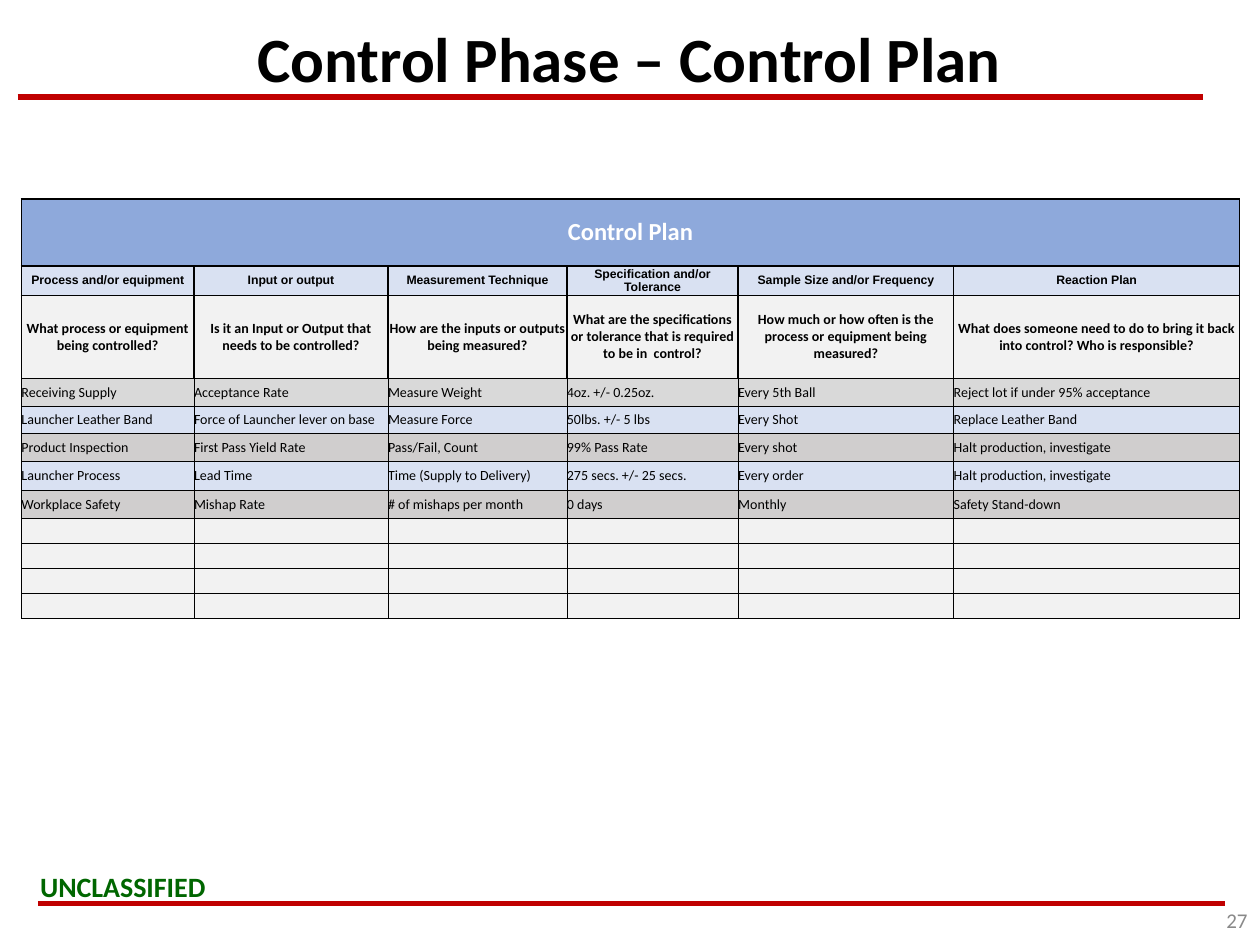
from lxml.etree import SubElement
from pptx import Presentation
from pptx.dml.color import RGBColor
from pptx.enum.shapes import MSO_CONNECTOR
from pptx.enum.text import MSO_ANCHOR, PP_ALIGN
from pptx.oxml.ns import qn
from pptx.util import Inches, Pt

RULE = "C00000"
WIDTHS = [1.37, 1.54, 1.42, 1.36, 1.71, 2.27]
HEADS = ["Process and/or equipment", "Input or output", "Measurement Technique",
         "Specification and/or Tolerance", "Sample Size and/or Frequency",
         "Reaction Plan"]
ASKS = ["What process or equipment being controlled?",
        "Is it an Input or Output that needs to be controlled?",
        "How are the inputs or outputs being measured?",
        "What are the specifications or tolerance that is required to be in  control?",
        "How much or how often is the process or equipment being measured?",
        "What does someone need to do to bring it back into control? Who is responsible?"]
ITEMS = [
    ["Receiving Supply", "Acceptance Rate", "Measure Weight", "4oz. +/- 0.25oz.",
     "Every 5th Ball", "Reject lot if under 95% acceptance"],
    ["Launcher Leather Band", "Force of Launcher lever on base", "Measure Force",
     "50lbs. +/- 5 lbs", "Every Shot", "Replace Leather Band"],
    ["Product Inspection", "First Pass Yield Rate", "Pass/Fail, Count",
     "99% Pass Rate", "Every shot", "Halt production, investigate"],
    ["Launcher Process", "Lead Time", "Time (Supply to Delivery)",
     "275 secs. +/- 25 secs.", "Every order", "Halt production, investigate"],
    ["Workplace Safety", "Mishap Rate", "# of mishaps per month", "0 days",
     "Monthly", "Safety Stand-down"],
]
BANDS = ["D9D9D9", "D9E1F2", "D0CECE", "D9E1F2", "D0CECE"]
TALLS = [0.22, 0.22, 0.22, 0.23, 0.22]
BLANKS = 4


def color(code):
    return RGBColor.from_string(code)


def style(para, size, code="000000", bold=False, face="Calibri", align=PP_ALIGN.LEFT):
    para.alignment = align
    font = para.font
    font.name, font.size, font.bold = face, Pt(size), bold
    font.color.rgb = color(code)


def add_rule(slide, left, top, width):
    line = slide.shapes.add_connector(
        MSO_CONNECTOR.STRAIGHT, Inches(left), Inches(top),
        Inches(left + width), Inches(top))
    line.line.color.rgb = color(RULE)
    line.line.width = Pt(3)
    SubElement(line.element.spPr, qn("a:effectLst"))


def add_label(slide, box, text, size, code, wrap=True, **look):
    frame = slide.shapes.add_textbox(*map(Inches, box)).text_frame
    frame.word_wrap = wrap
    frame.vertical_anchor = MSO_ANCHOR.MIDDLE if wrap else MSO_ANCHOR.TOP
    frame.text = text
    style(frame.paragraphs[0], size, code, **look)


def add_title(slide, box, text):
    title = slide.shapes.title
    title.left, title.top, title.width, title.height = map(Inches, box)
    title.text_frame.text = text
    title.text_frame.vertical_anchor = MSO_ANCHOR.MIDDLE
    style(title.text_frame.paragraphs[0], 36, bold=True, align=PP_ALIGN.CENTER)


def add_edges(cell, width, top):
    props = cell._tc.get_or_add_tcPr()
    for side in "LRTB":
        size = top if side == "T" else width
        edge = SubElement(props, qn(f"a:ln{side}"), w=str(Pt(size)))
        fill = SubElement(edge, qn("a:solidFill"))
        SubElement(fill, qn("a:srgbClr"), val="000000")


def fill_cell(cell, text, fill, edge, top, size, **look):
    add_edges(cell, edge, top)
    cell.fill.solid()
    cell.fill.fore_color.rgb = color(fill)
    cell.margin_left = cell.margin_right = cell.margin_top = cell.margin_bottom = 0
    cell.vertical_anchor = MSO_ANCHOR.MIDDLE
    para = cell.text_frame.paragraphs[0]
    if text:
        para.text = text
    else:
        SubElement(para._p, qn("a:endParaRPr"), sz=str(size * 100))
    style(para, size, **look)


def add_plan(slide, box):
    head = dict(bold=True, align=PP_ALIGN.CENTER)
    count = len(WIDTHS)
    # Each row: height, texts, fill, edge width, top edge width, text size, look
    rows = [
        (0.53, ["Control Plan"] + [""] * (count - 1), "8EA9DB", 1, 1, 14,
         dict(head, code="FFFFFF")),
        (0.22, HEADS, "D9E1F2", 1, 1, 7, dict(head, face="Arial")),
        (0.66, ASKS, "F2F2F2", 1, 1, 8, head),
    ]
    for i, (tall, texts, fill) in enumerate(zip(TALLS, ITEMS, BANDS)):
        rows.append((tall, texts, fill, 0.5, 0.5 if i else 1, 8, {}))
    rows += [(0.2, [""] * count, "F2F2F2", 0.5, 0.5, 8, {})] * BLANKS

    table = slide.shapes.add_table(len(rows), count, *map(Inches, box)).table
    for col, width in zip(table.columns, WIDTHS):
        col.width = Inches(width)
    for row, (tall, texts, fill, edge, top, size, look) in zip(table.rows, rows):
        row.height = Inches(tall)
        for cell, text in zip(row.cells, texts):
            fill_cell(cell, text, fill, edge, top, size, **look)
    table.cell(0, 0).merge(table.cell(0, count - 1))


def main():
    deck = Presentation()
    deck.slide_width, deck.slide_height = Inches(10), Inches(7.5)
    slide = deck.slides.add_slide(deck.slide_layouts[5])
    add_rule(slide, 0.14, 0.77, 9.41)
    add_label(slide, (0.22, 6.85, 1.53, 0.37), "UNCLASSIFIED", 16, "006600",
              wrap=False, bold=True)
    add_rule(slide, 0.3, 7.17, 9.42)
    add_title(slide, (1.36, -0.17, 7.27, 1.25), "Control Phase – Control Plan")
    add_label(slide, (7.67, 7.1, 2.33, 0.4), "27", 12, "898989", align=PP_ALIGN.RIGHT)
    add_plan(slide, (0.17, 1.58, 9.67, 3.33))
    deck.save("out.pptx")


if __name__ == "__main__":
    main()
